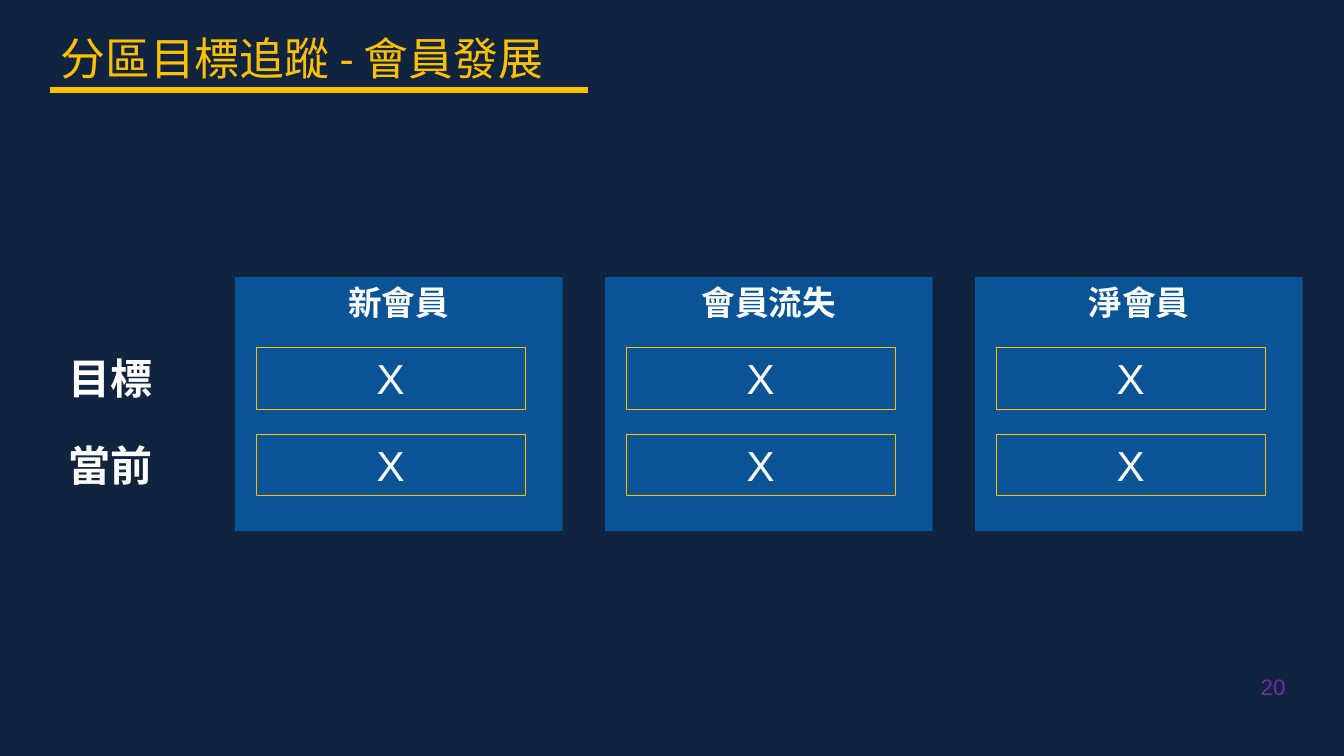
from dataclasses import dataclass

from lxml.etree import SubElement
from pptx import Presentation
from pptx.dml.color import RGBColor
from pptx.enum.shapes import MSO_CONNECTOR, MSO_SHAPE
from pptx.enum.text import MSO_ANCHOR, MSO_AUTO_SIZE, PP_ALIGN
from pptx.oxml.ns import qn
from pptx.util import Inches, Pt


@dataclass(frozen=True)
class Theme:
    background: RGBColor = RGBColor(0x10, 0x23, 0x3F)
    panel: RGBColor = RGBColor(0x0A, 0x54, 0x96)
    accent: RGBColor = RGBColor(0xFF, 0xC0, 0x00)
    text: RGBColor = RGBColor(0xFF, 0xFF, 0xFF)
    number: RGBColor = RGBColor(0x70, 0x30, 0xA0)
    font: str = "Calibri"
    value_font: str = "Arial"
    title_size: Pt = Pt(32)
    label_size: Pt = Pt(30)
    panel_size: Pt = Pt(24)
    number_size: Pt = Pt(16)


THEME = Theme()
PANELS = ["新會員", "會員流失", "淨會員"]
ROWS = ["目標", "當前"]
PANEL_LEFT, PANEL_TOP, PANEL_STEP = 2.33, 2.75, 3.67
ROW_TOP, ROW_STEP, ROW_HEIGHT = 3.45, 0.86, 0.61


def box(left, top, width, height):
    return [Inches(v) for v in (left, top, width, height)]


def write(s, text, size, color, font=THEME.font, bold=False,
          align=PP_ALIGN.LEFT, anchor=MSO_ANCHOR.TOP):
    tf = s.text_frame
    tf.word_wrap = True
    tf.auto_size = MSO_AUTO_SIZE.NONE
    tf.vertical_anchor = anchor
    p = tf.paragraphs[0]
    p.text = text
    p.alignment = align
    p.font.size = size
    p.font.name = font
    p.font.bold = bold
    p.font.color.rgb = color


def add_title(slide, text):
    title = slide.shapes.title
    title.left, title.top, title.width, title.height = box(0.5, 0.25, 7.67, 0.64)
    write(title, text, THEME.title_size, THEME.accent)
    rule = slide.shapes.add_connector(
        MSO_CONNECTOR.STRAIGHT, Inches(0.5), Inches(0.89), Inches(5.83), Inches(0.89))
    rule.line.color.rgb = THEME.accent
    rule.line.width = Pt(4.5)
    SubElement(rule._element.spPr, qn("a:effectLst"))


def add_rectangle(shapes, bounds, fill=None, line=None):
    s = shapes.add_shape(MSO_SHAPE.RECTANGLE, *bounds)
    s.shadow.inherit = False
    if fill is None:
        s.fill.background()
    else:
        s.fill.solid()
        s.fill.fore_color.rgb = fill
    if line is None:
        s.line.fill.background()
    else:
        s.line.color.rgb = line
        s.line.width = Pt(0.75)
    return s


def add_panel(slide, left, heading, row_tops):
    """Group a headed panel with one outlined value box per row."""
    group = slide.shapes.add_group_shape()
    panel = add_rectangle(group.shapes, box(left, PANEL_TOP, 3.25, 2.52), fill=THEME.panel)
    write(panel, heading, THEME.panel_size, THEME.text, bold=True, align=PP_ALIGN.CENTER)
    for top in row_tops:
        value = add_rectangle(
            group.shapes, box(left + 0.21, top, 2.67, ROW_HEIGHT), line=THEME.accent)
        write(value, "X", THEME.label_size, THEME.text, THEME.value_font,
              align=PP_ALIGN.CENTER)


def add_row_label(slide, top, text):
    label = slide.shapes.add_textbox(*box(0.58, top, 1.75, ROW_HEIGHT))
    write(label, text, THEME.label_size, THEME.text, bold=True)


def add_page_number(slide, text):
    number = slide.shapes.add_textbox(*box(12.14, 6.63, 0.61, 0.37))
    number.text_frame.margin_left = number.text_frame.margin_right = 0
    write(number, text, THEME.number_size, THEME.number, THEME.value_font,
          align=PP_ALIGN.RIGHT, anchor=MSO_ANCHOR.MIDDLE)


def main():
    prs = Presentation()
    prs.slide_width, prs.slide_height = Inches(13.33), Inches(7.5)
    slide = prs.slides.add_slide(prs.slide_layouts.get_by_name("Title Only"))
    slide.background.fill.solid()
    slide.background.fill.fore_color.rgb = THEME.background

    add_page_number(slide, "20")
    add_title(slide, "分區目標追蹤 - 會員發展")
    row_tops = [ROW_TOP + i * ROW_STEP for i in range(len(ROWS))]
    for top, text in zip(row_tops, ROWS):
        add_row_label(slide, top, text)
    for i, heading in enumerate(PANELS):
        add_panel(slide, PANEL_LEFT + i * PANEL_STEP, heading, row_tops)
    prs.save("out.pptx")


if __name__ == "__main__":
    main()
